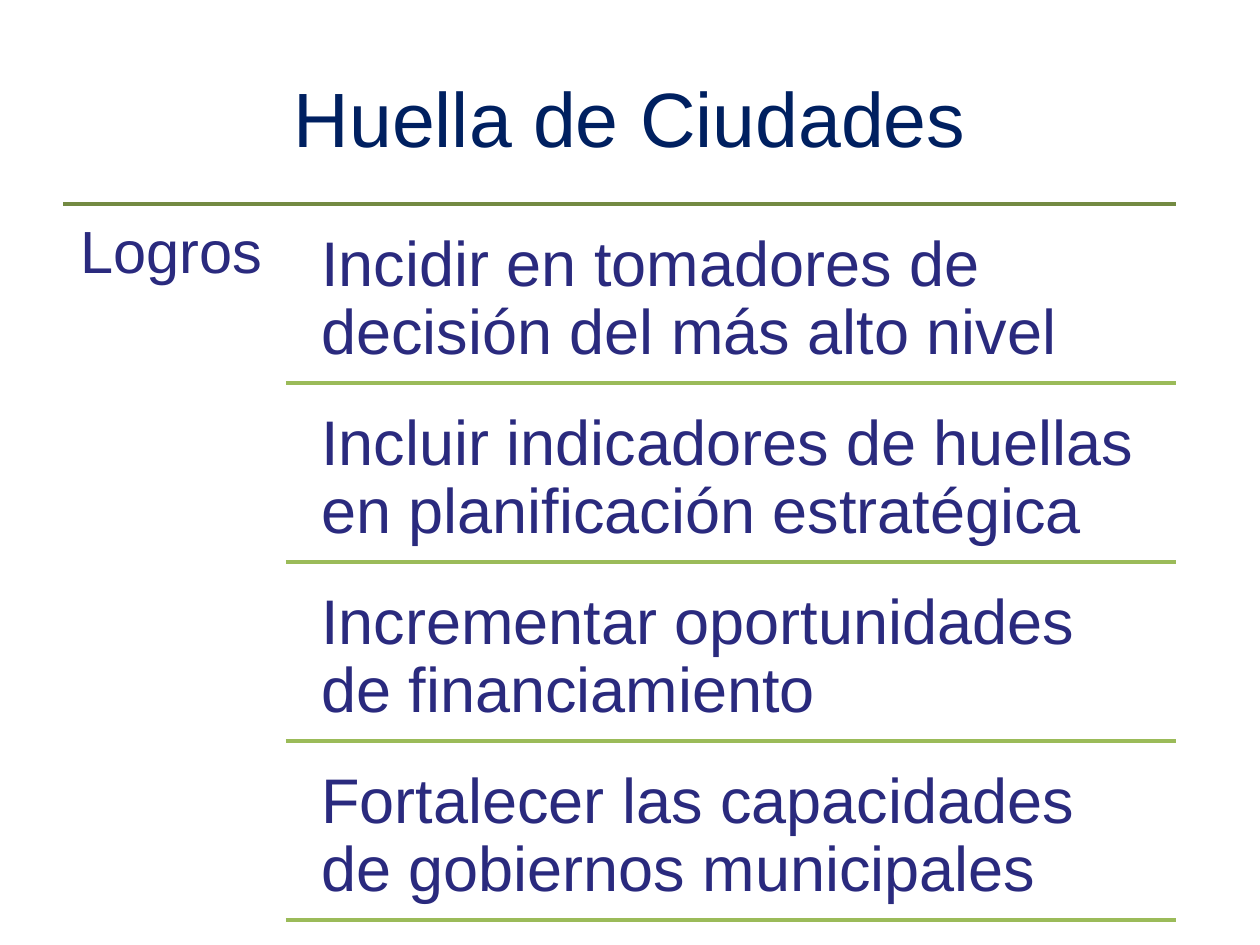
from lxml import etree
from pptx import Presentation
from pptx.dml.color import RGBColor
from pptx.enum import shapes, text
from pptx.oxml.ns import qn
from pptx import util as u

PX = 9144  # EMU per px, 100 px to the inch


def px(length):
    return u.Emu(length * PX)


def color(hex_value):
    return RGBColor.from_string(hex_value)


class Deck:
    FONT = "Arial"
    TITLE = "002060"
    BODY = "2A2A7E"
    TOP_RULE = "738A42"
    ROW_RULE = "9BBB59"

    def __init__(self, width, height):
        self.prs = Presentation()
        self.prs.slide_width, self.prs.slide_height = px(width), px(height)
        self.slide = self.prs.slides.add_slide(self.prs.slide_layouts[6])

    def label(self, words, left, top, width, height, size, ink, inset=10,
              spacing=0.9, align=text.PP_ALIGN.LEFT, anchor=text.MSO_ANCHOR.TOP):
        box = self.slide.shapes.add_textbox(px(left), px(top), px(width), px(height))
        frame = box.text_frame
        frame.text = words
        frame.word_wrap = True
        frame.vertical_anchor = anchor
        frame.margin_left = frame.margin_right = px(inset)
        frame.margin_top = frame.margin_bottom = px(inset)
        paragraph = frame.paragraphs[0]
        paragraph.alignment = align
        paragraph.line_spacing = spacing
        font = paragraph.runs[0].font
        font.name, font.size = self.FONT, u.Pt(size)
        font.color.rgb = color(ink)

    def rule(self, left, right, y, ink):
        """Draw a horizontal line without a shadow."""
        line = self.slide.shapes.add_connector(
            shapes.MSO_CONNECTOR.STRAIGHT, px(left), px(y), px(right), px(y))
        line.line.color.rgb = color(ink)
        line.line.width = u.Pt(2)
        etree.SubElement(line._element.spPr, qn("a:effectLst"))


ACHIEVEMENTS = [
    "Incidir en tomadores de decisión del más alto nivel",
    "Incluir indicadores de huellas en planificación estratégica",
    "Incrementar oportunidades de financiamiento",
    "Fortalecer las capacidades de gobiernos municipales",
]
LEFT, RIGHT, TOP = 50, 933, 162
HEADING_WIDTH = 177
INDENT, GAP, ROW_HEIGHT = 13, 7, 135


def main():
    deck = Deck(1000, 750)
    deck.label("Huella de Ciudades", LEFT, 30, 900, 125, 44, deck.TITLE,
               spacing=1.0, align=text.PP_ALIGN.CENTER,
               anchor=text.MSO_ANCHOR.MIDDLE)
    deck.rule(LEFT, RIGHT, TOP, deck.TOP_RULE)
    deck.label("Logros", LEFT, TOP, HEADING_WIDTH, 575, 34, deck.BODY, inset=14)

    column = LEFT + HEADING_WIDTH
    for row, achievement in enumerate(ACHIEVEMENTS):
        row_top = TOP + GAP + row * (ROW_HEIGHT + GAP)
        deck.label(achievement, column + INDENT, row_top,
                   RIGHT - column - INDENT, ROW_HEIGHT, 36, deck.BODY, inset=15)
        deck.rule(column, RIGHT, row_top + ROW_HEIGHT, deck.ROW_RULE)

    deck.prs.save("out.pptx")


if __name__ == "__main__":
    main()
